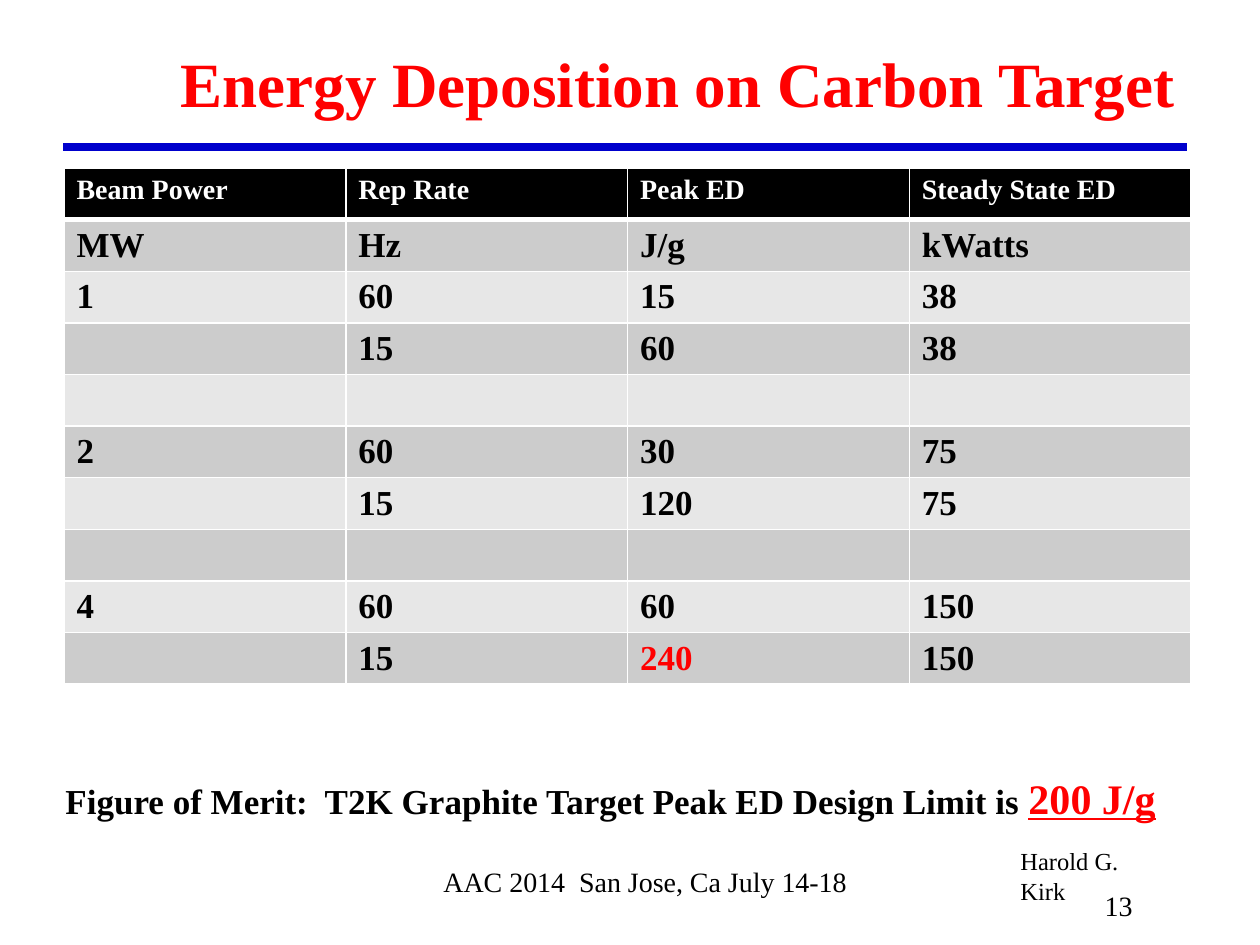
"""Build a slide with a table of energy deposition on a carbon target."""
import pptx
import pptx.dml.color
import pptx.enum.shapes
import pptx.enum.text
import pptx.oxml
import pptx.util
from lxml import etree

Cm = pptx.util.Cm
Pt = pptx.util.Pt
FONT = "Times New Roman"
COLORS = {
    "black": "000000", "white": "FFFFFF", "red": "FF0000",
    "blue": "0000CC", "dark band": "CCCCCC", "light band": "E7E7E7",
}
NAMESPACE = "http://schemas.openxmlformats.org/drawingml/2006/main"


def format_span(span, size, color="black", bold=False):
    span.font.name = FONT
    span.font.size = Pt(size)
    span.font.bold = bold
    span.font.color.rgb = pptx.dml.color.RGBColor.from_string(COLORS[color])


def add_border(cell, side, width):
    border = etree.SubElement(
        cell._tc.get_or_add_tcPr(), f"{{{NAMESPACE}}}{side}", w=str(Pt(width)))
    fill = etree.SubElement(border, f"{{{NAMESPACE}}}solidFill")
    etree.SubElement(fill, f"{{{NAMESPACE}}}srgbClr", val=COLORS["white"])


deck = pptx.Presentation()
deck.slide_width = Cm(25.4)
deck.slide_height = Cm(19.05)
page = deck.slides.add_slide(deck.slide_layouts[5])

rule = page.shapes.add_connector(
    pptx.enum.shapes.MSO_CONNECTOR.STRAIGHT, Cm(1.27), Cm(2.96), Cm(23.92), Cm(2.96))
rule.line.width = Pt(4.5)
rule.line.color.rgb = pptx.dml.color.RGBColor.from_string(COLORS["blue"])
etree.SubElement(rule._element.spPr, f"{{{NAMESPACE}}}effectLst")

title = page.shapes.title
title.left, title.top, title.width, title.height = Cm(3.39), Cm(0.42), Cm(20.95), Cm(2.12)
title.fill.solid()
title.fill.fore_color.rgb = pptx.dml.color.RGBColor.from_string(COLORS["white"])
title.text_frame.text = "Energy Deposition on Carbon Target"
title.text_frame.auto_size = pptx.enum.text.MSO_AUTO_SIZE.NONE
title.text_frame.vertical_anchor = pptx.enum.text.MSO_ANCHOR.BOTTOM
title.text_frame.paragraphs[0].alignment = pptx.enum.text.PP_ALIGN.LEFT
format_span(title.text_frame.paragraphs[0].runs[0], 36, "red", True)

rows = [
    ["Beam Power", "Rep Rate", "Peak ED", "Steady State ED"],
    ["MW", "Hz", "J/g", "kWatts"],
    ["1", "60", "15", "38"],
    ["", "15", "60", "38"],
    ["", "", "", ""],
    ["2", "60", "30", "75"],
    ["", "15", "120", "75"],
    ["", "", "", ""],
    ["4", "60", "60", "150"],
    ["", "15", "240", "150"],
]
table = page.shapes.add_table(
    len(rows), len(rows[0]), Cm(1.29), Cm(3.39), Cm(22.72), Cm(10.4)).table
for column in table.columns:
    column.width = Cm(5.68)
for row_number, row in enumerate(rows):
    table.rows[row_number].height = Cm(1.04)
    header = row_number == 0
    band = "black" if header else "dark band" if row_number % 2 else "light band"
    for column_number, label in enumerate(row):
        cell = table.cell(row_number, column_number)
        add_border(cell, "lnL", 1)
        add_border(cell, "lnR", 1)
        add_border(cell, "lnT", 3 if row_number == 1 else 1)
        add_border(cell, "lnB", 3 if header else 1)
        cell.fill.solid()
        cell.fill.fore_color.rgb = pptx.dml.color.RGBColor.from_string(COLORS[band])
        if label:
            cell.text_frame.text = label
            color = "white" if header else "red" if label == "240" else "black"
            format_span(cell.text_frame.paragraphs[0].runs[0], 16 if header else 20, color, True)

captions = [
    ("Harold G. Kirk", 14, 20.32, 16.94, 3.51, 0.84),
    ("13", 16, 22.02, 17.78, 1.17, 0.94),
    ("AAC 2014  San Jose, Ca July 14-18", 16, 8.69, 17.3, 8.74, 0.94),
    ("Figure of Merit:  T2K Graphite Target Peak ED Design Limit is ",
     20, 1.07, 15.44, 22.66, 1.27),
]
for caption, size, left, top, width, height in captions:
    box = page.shapes.add_textbox(Cm(left), Cm(top), Cm(width), Cm(height))
    box.text_frame.word_wrap = False
    box.text_frame.text = caption
    para = box.text_frame.paragraphs[0]
    format_span(para.runs[0], size, bold=size == 20)

limit = para.add_run()
limit.text = "200 J/g"
format_span(limit, 24, "red", True)
limit.font.underline = True

deck.save("out.pptx")
